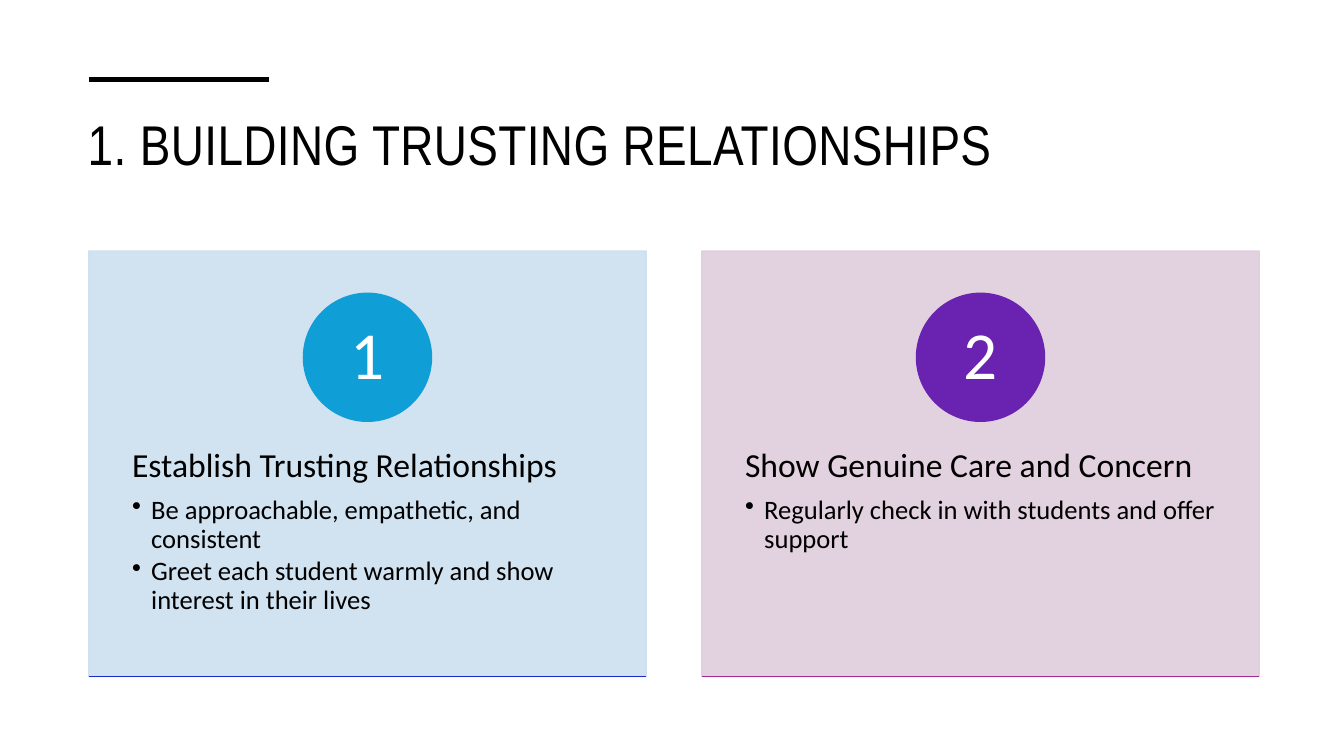
"""Build a slide with two numbered cards on building trusting relationships."""
from lxml import etree
from pptx import Presentation
from pptx.dml.color import RGBColor
from pptx.enum.shapes import MSO_CONNECTOR, MSO_SHAPE
from pptx.enum.text import MSO_ANCHOR, PP_ALIGN
from pptx.oxml.ns import qn
from pptx.util import Inches, Pt

TITLE = "1. BUILDING TRUSTING RELATIONSHIPS"
BLACK = RGBColor(0x00, 0x00, 0x00)
WHITE = RGBColor(0xFF, 0xFF, 0xFF)
CARDS = [
    {
        "heading": "Establish Trusting Relationships",
        "bullets": [
            "Be approachable, empathetic, and consistent",
            "Greet each student warmly and show interest in their lives",
        ],
        "panel": RGBColor(0xCC, 0xDF, 0xEF),
        "badge": RGBColor(0x0F, 0x9E, 0xD5),
        "rule": RGBColor(0x19, 0x2C, 0xC3),
    },
    {
        "heading": "Show Genuine Care and Concern",
        "bullets": ["Regularly check in with students and offer support"],
        "panel": RGBColor(0xDF, 0xCD, 0xDC),
        "badge": RGBColor(0x6A, 0x22, 0xB1),
        "rule": RGBColor(0xA0, 0x2B, 0x93),
    },
]

LEFT, TOP = 0.88, 2.49
CARD_WIDTH, CARD_HEIGHT = 5.53, 4.22
CARD_STEP = 6.08
BADGE_SIZE, BADGE_DROP = 1.27, 0.42
NUMBER_SIZE = 0.89
TEXT_DROP, TEXT_HEIGHT = 1.6, 2.53
INDENT = 0.19

RECTANGLE, OVAL = MSO_SHAPE.RECTANGLE, MSO_SHAPE.OVAL
STRAIGHT = MSO_CONNECTOR.STRAIGHT
TOP_ANCHOR, MIDDLE = MSO_ANCHOR.TOP, MSO_ANCHOR.MIDDLE
ALIGN_LEFT, CENTER = PP_ALIGN.LEFT, PP_ALIGN.CENTER


def add_rule(page, left, top, width, color, weight):
    rule = page.shapes.add_connector(
        STRAIGHT, Inches(left), Inches(top), Inches(left + width), Inches(top))
    rule.line.color.rgb = color
    rule.line.width = Pt(weight)
    etree.SubElement(rule.element.spPr, qn("a:effectLst"))


def add_filled(page, kind, left, top, width, height, color, opacity=100):
    shape = page.shapes.add_shape(
        kind, Inches(left), Inches(top), Inches(width), Inches(height))
    shape.shadow.inherit = False
    shape.fill.solid()
    shape.fill.fore_color.rgb = color
    shape.line.color.rgb = color
    shape.line.width = Pt(1)
    if opacity < 100:
        for tint in shape.element.spPr.iter(qn("a:srgbClr")):
            etree.SubElement(tint, qn("a:alpha"), val=str(opacity * 1000))


def add_text_box(page, left, top, width, height, side_inset, end_inset, anchor):
    box = page.shapes.add_textbox(
        Inches(left), Inches(top), Inches(width), Inches(height))
    frame = box.text_frame
    frame.word_wrap = True
    frame.vertical_anchor = anchor
    frame.margin_left = frame.margin_right = Inches(side_inset)
    frame.margin_top = frame.margin_bottom = Inches(end_inset)
    return frame


def format_para(para, size, color, space_share, align=ALIGN_LEFT):
    para.alignment = align
    para.line_spacing = 0.9
    para.space_after = Pt(size * space_share)
    for span in para.runs:
        span.font.name = "Calibri"
        span.font.size = Pt(size)
        span.font.color.rgb = color


def add_bullet(frame, text):
    para = frame.add_paragraph()
    para.text = text
    para.level = 1
    format_para(para, 19, BLACK, 0.15)
    properties = para._p.get_or_add_pPr()
    properties.set("marL", str(Inches(INDENT)))
    properties.set("indent", str(-Inches(INDENT)))
    etree.SubElement(properties, qn("a:buChar"), char="•")


def add_card(page, index, card):
    left = LEFT + index * CARD_STEP
    center = left + CARD_WIDTH / 2
    badge_top = TOP + BADGE_DROP
    add_filled(page, RECTANGLE, left, TOP, CARD_WIDTH, CARD_HEIGHT, card["panel"], 90)

    body = add_text_box(
        page, left, TOP + TEXT_DROP, CARD_WIDTH, TEXT_HEIGHT, 0.43, 0.36, TOP_ANCHOR)
    body.text = card["heading"]
    format_para(body.paragraphs[0], 24, BLACK, 0.35)
    for bullet in card["bullets"]:
        add_bullet(body, bullet)

    add_filled(page, OVAL, center - BADGE_SIZE / 2, badge_top,
               BADGE_SIZE, BADGE_SIZE, card["badge"])
    number = add_text_box(
        page, center - NUMBER_SIZE / 2, badge_top + (BADGE_SIZE - NUMBER_SIZE) / 2,
        NUMBER_SIZE, NUMBER_SIZE, 0.1, 0.01, MIDDLE)
    number.text = str(index + 1)
    format_para(number.paragraphs[0], 48, WHITE, 0.35, CENTER)

    add_rule(page, left, TOP + CARD_HEIGHT, CARD_WIDTH, card["rule"], 1)


def add_title(page):
    title = page.shapes.title
    title.left, title.top = Inches(0.77), Inches(0.99)
    title.width, title.height = Inches(11.81), Inches(1.15)
    frame = title.text_frame
    frame.text = TITLE
    frame.word_wrap = True
    frame.vertical_anchor = TOP_ANCHOR
    frame.margin_top = Inches(0.1)
    para = frame.paragraphs[0]
    para.alignment = ALIGN_LEFT
    span = para.runs[0]
    span.font.name = "Arial Narrow"
    span.font.size = Pt(40)
    span.font.color.rgb = BLACK
    span.font._element.set("spc", "30")


def main():
    deck = Presentation()
    deck.slide_width, deck.slide_height = Inches(13.33), Inches(7.5)
    page = deck.slides.add_slide(deck.slide_layouts[5])
    add_rule(page, LEFT, 0.79, 1.79, BLACK, 3.5)
    add_title(page)
    for index, card in enumerate(CARDS):
        add_card(page, index, card)
    deck.save("out.pptx")


if __name__ == "__main__":
    main()
